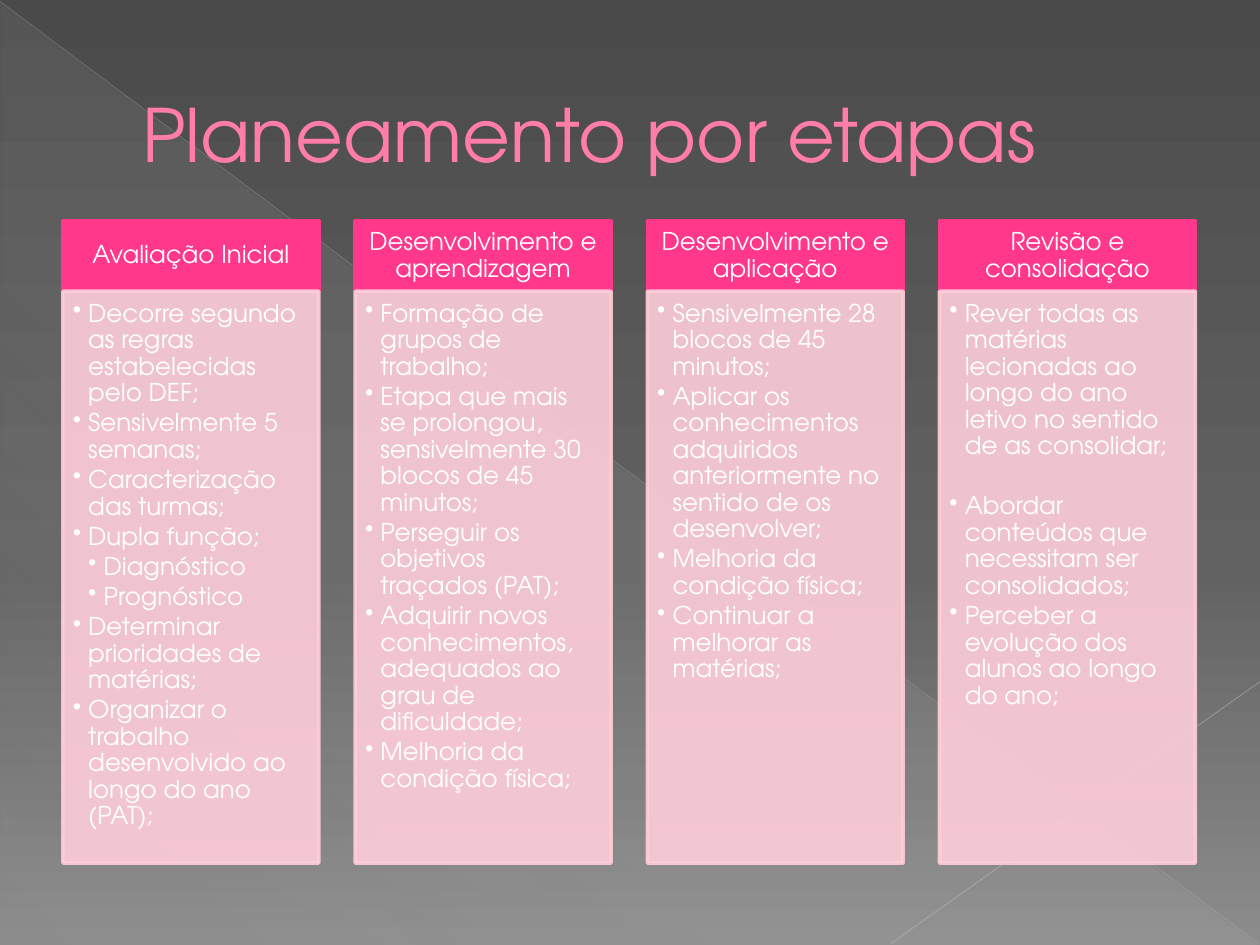
"""Build the slide on planning by stages, with four columns."""
import pptx
import pptx.util
import pptx.dml.color
import pptx.enum.shapes
import pptx.enum.text
import pptx.oxml.ns
import lxml.etree

Cm, Pt = pptx.util.Cm, pptx.util.Pt
rgb = pptx.dml.color.RGBColor.from_string
qn = pptx.oxml.ns.qn
sub = lxml.etree.SubElement
kinds = pptx.enum.shapes.MSO_SHAPE
aligns = pptx.enum.text.PP_ALIGN
anchors = pptx.enum.text.MSO_ANCHOR

font = "TeX Gyre Adventor"
hues = {
    "dark": "4A4A4A", "mid": "626262", "light": "8C8C8C", "sheen": "D2D2D2",
    "ray": "BFBFBF", "beam": "C6C6C6", "title": "FF7DA7", "edge": "B12761",
    "head": "FF388C", "body": "FFCEDA", "text": "FFFFFF",
}
stages = [
    ("Avaliação Inicial", [
        (1, "Decorre segundo as regras estabelecidas pelo DEF;"),
        (1, "Sensivelmente 5 semanas;"),
        (1, "Caracterização das turmas;"),
        (1, "Dupla função;"),
        (2, "Diagnóstico"),
        (2, "Prognóstico"),
        (1, "Determinar prioridades de matérias;"),
        (1, "Organizar o trabalho desenvolvido ao longo do ano (PAT);"),
    ]),
    ("Desenvolvimento e aprendizagem", [
        (1, "Formação de grupos de trabalho;"),
        (1, "Etapa que mais se prolongou, sensivelmente 30 blocos de 45 minutos;"),
        (1, "Perseguir os objetivos traçados (PAT);"),
        (1, "Adquirir novos conhecimentos, adequados ao grau de dificuldade;"),
        (1, "Melhoria da condição física;"),
    ]),
    ("Desenvolvimento e aplicação", [
        (1, "Sensivelmente 28 blocos de 45 minutos;"),
        (1, "Aplicar os conhecimentos adquiridos anteriormente no sentido de os desenvolver;"),
        (1, "Melhoria da condição física;"),
        (1, "Continuar a melhorar as matérias;"),
    ]),
    ("Revisão e consolidação", [
        (1, "Rever todas as matérias lecionadas ao longo do ano letivo no sentido de as consolidar;"),
        (1, "Abordar conteúdos que necessitam ser consolidados;"),
        (1, "Perceber a evolução dos alunos ao longo do ano;"),
    ]),
]
gaps = {(3, 0): 19.3}


def blend(root, angle, stops):
    """Give the gradient under root its stops and angle."""
    grad = root.find(".//" + qn("a:gradFill"))
    grad.clear()
    rows = sub(grad, qn("a:gsLst"))
    for place, hue, alpha in stops:
        stop = sub(rows, qn("a:gs"), pos=str(place * 1000))
        clr = sub(stop, qn("a:srgbClr"), val=hues[hue])
        sub(clr, qn("a:alpha"), val=str(alpha * 1000))
    sub(grad, qn("a:lin"), ang=str(angle * 60000), scaled="0")


def fade(part, alpha):
    """Set the opacity of the fill and line of a part."""
    for clr in part.element.spPr.iter(qn("a:srgbClr")):
        sub(clr, qn("a:alpha"), val=str(alpha * 1000))


deck = pptx.Presentation()
deck.slide_width, deck.slide_height = Cm(25.4), Cm(19.05)
slide = deck.slides.add_slide(deck.slide_layouts[6])
shapes = slide.shapes

slide.background.fill.gradient()
blend(slide.element, 90, [(0, "dark", 100), (60, "mid", 100), (100, "light", 100)])

wedge = shapes.add_shape(kinds.RIGHT_TRIANGLE, Cm(0.02), Cm(0.05), Cm(25.35), Cm(19))
wedge.shadow.inherit = False
wedge.line.fill.background()
wedge.fill.gradient()
blend(wedge.element, 133, [(0, "sheen", 10), (70, "sheen", 8), (100, "sheen", 1)])

for x1, y1, x2, y2, hue, width, alpha in [
    (0, 0.03, 25.37, 19.02, "ray", 0.39, 35),
    (25.4, 13.74, 17.96, 19.02, "beam", 0.47, 45),
]:
    line = shapes.add_connector(
        pptx.enum.shapes.MSO_CONNECTOR.STRAIGHT, Cm(x1), Cm(y1), Cm(x2), Cm(y2))
    line.line.color.rgb = rgb(hues[hue])
    line.line.width = Pt(width)
    fade(line, alpha)
    sub(line.element.spPr, qn("a:effectLst"))

title = shapes.add_textbox(Cm(1.27), Cm(0.74), Cm(22.86), Cm(3.89))
frame = title.text_frame
frame.word_wrap = True
frame.vertical_anchor = anchors.MIDDLE
para = frame.paragraphs[0]
para._p.get_or_add_pPr().set("marL", str(Cm(1.35)))
run = para.add_run()
run.text = "Planeamento por etapas"
run.font.name, run.font.size = font, Pt(42)
run.font.color.rgb = rgb(hues["title"])
edge = lxml.etree.Element(qn("a:ln"), w=str(Pt(0.5)))
sub(sub(edge, qn("a:solidFill")), qn("a:srgbClr"), val=hues["edge"])
run.font._element.insert(0, edge)

for col, (name, points) in enumerate(stages):
    for hue, top, high, alpha, anchor, pads, rows in [
        ("head", 4.45, 1.42, 100, anchors.MIDDLE, (0.28, 0.15, 0.28, 0.15), [(0, name)]),
        ("body", 5.87, 11.53, 90, anchors.TOP, (0.2, 0.2, 0.27, 0.3), points),
    ]:
        box = shapes.add_shape(
            kinds.RECTANGLE, Cm(1.27 + 5.89 * col), Cm(top), Cm(5.16), Cm(high))
        box.shadow.inherit = False
        box.fill.solid()
        box.fill.fore_color.rgb = box.line.color.rgb = rgb(hues[hue])
        box.line.width = Pt(2)
        fade(box, alpha)
        frame = box.text_frame
        frame.word_wrap = True
        frame.vertical_anchor = anchor
        (frame.margin_left, frame.margin_top,
         frame.margin_right, frame.margin_bottom) = map(Cm, pads)
        for row, (level, text) in enumerate(rows):
            para = frame.add_paragraph() if row else frame.paragraphs[0]
            para.line_spacing = 0.9
            para.alignment = aligns.CENTER
            if level:
                para.level = level
                para.alignment = aligns.LEFT
                para.space_after = Pt(gaps.get((col, row), 2.1))
                props = para._p.get_or_add_pPr()
                props.set("marL", str(Cm(0.31 * level)))
                props.set("indent", str(Cm(-0.31)))
                sub(props, qn("a:buChar"), char="•")
            run = para.add_run()
            run.text = text
            run.font.name, run.font.size = font, Pt(14)
            run.font.color.rgb = rgb(hues["text"])

deck.save("out.pptx")
